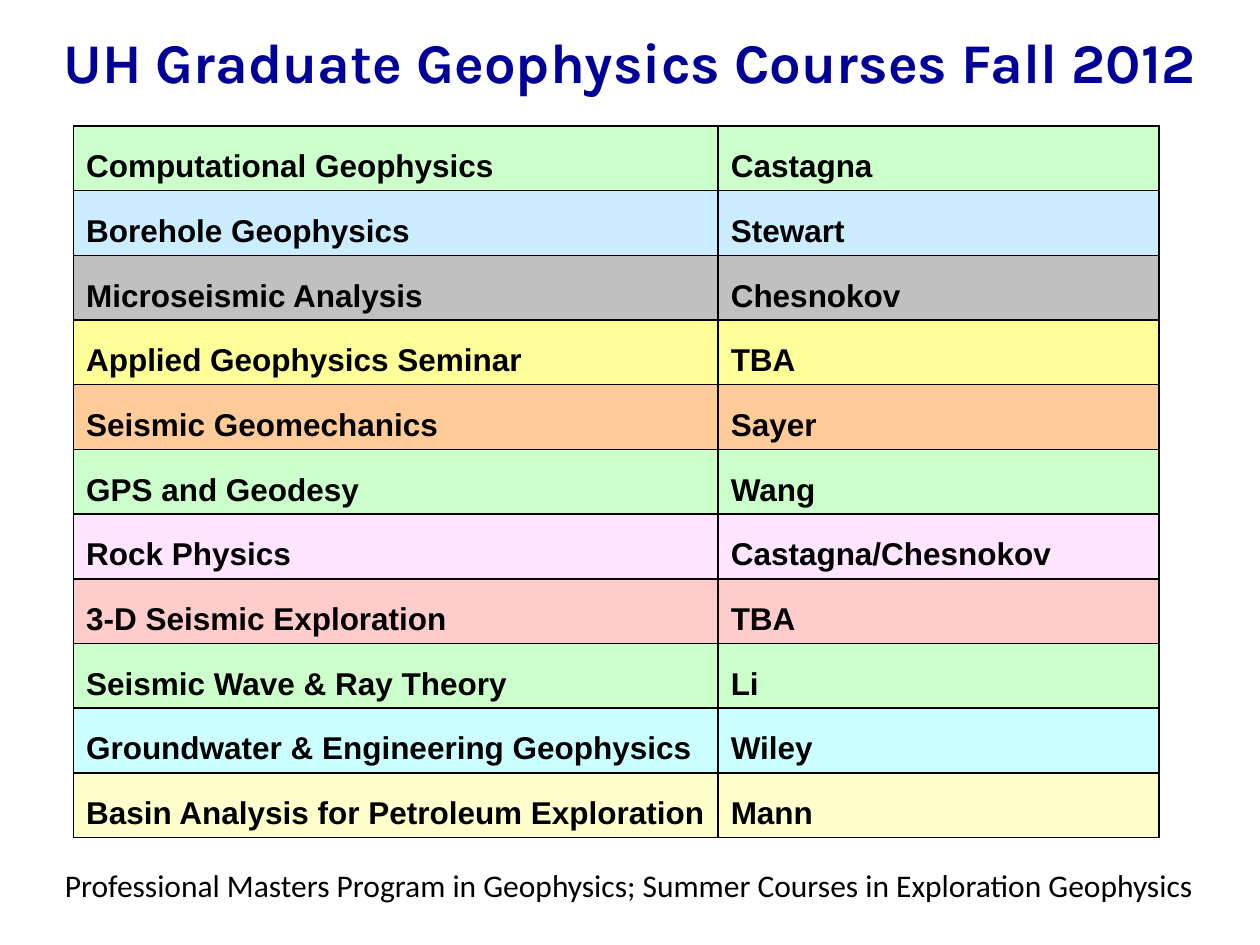
from dataclasses import dataclass

from lxml.etree import SubElement
from pptx import Presentation
from pptx.dml.color import RGBColor as Color
from pptx.enum.text import MSO_ANCHOR as Anchor, MSO_AUTO_SIZE as AutoSize, PP_ALIGN as Align
from pptx.oxml.ns import qn
from pptx.util import Pt

TITLE = "UH Graduate Geophysics Courses Fall 2012"
FOOTER = "Professional Masters Program in Geophysics; Summer Courses in Exploration Geophysics"

# course, instructor, row colour
COURSES = [
    ("Computational Geophysics", "Castagna", "green"),
    ("Borehole Geophysics", "Stewart", "blue"),
    ("Microseismic Analysis", "Chesnokov", "gray"),
    ("Applied Geophysics Seminar", "TBA", "yellow"),
    ("Seismic Geomechanics", "Sayer", "orange"),
    ("GPS and Geodesy", "Wang", "green"),
    ("Rock Physics", "Castagna/Chesnokov", "pink"),
    ("3-D Seismic Exploration", "TBA", "rose"),
    ("Seismic Wave & Ray Theory", "Li", "green"),
    ("Groundwater & Engineering Geophysics", "Wiley", "cyan"),
    ("Basin Analysis for Petroleum Exploration", "Mann", "cream"),
]

ROW_COLORS = {
    "green": "CCFFCC", "blue": "CCECFF", "gray": "C0C0C0",
    "yellow": "FFFF99", "orange": "FFCC99", "pink": "FFE5FF",
    "rose": "FFCCCC", "cyan": "CCFFFF", "cream": "FFFFCC",
}


@dataclass(frozen=True)
class TextStyle:
    font: str
    size: int
    color: str
    bold: bool = False


@dataclass(frozen=True)
class Theme:
    title = TextStyle("Karla", 32, "000099", True)
    cell = TextStyle("Arial", 18, "000000", True)
    footer = TextStyle("Calibri", 18, "000000")
    border = "000000"
    border_width = 1


THEME = Theme()
SLIDE_SIZE = (720, 540)
TITLE_BOX = (0, 12, 720, 45.5)
FOOTER_BOX = (30, 491.5, 666, 29)
TABLE_LEFT, TABLE_TOP, TABLE_HEIGHT = 42, 72, 406.8
COLUMN_WIDTHS = (368.4, 251.8)


def write(frame, text, style, align=Align.LEFT):
    para = frame.paragraphs[0]
    para.alignment = align
    span = para.add_run()
    span.text = text
    span.font.name = style.font
    span.font.size = Pt(style.size)
    span.font.bold = style.bold
    span.font.color.rgb = Color.from_string(style.color)


def add_text(page, bounds, text, style, align=Align.LEFT, wrap=True):
    frame = page.shapes.add_textbox(*map(Pt, bounds)).text_frame
    frame.word_wrap = wrap
    frame.auto_size = AutoSize.SHAPE_TO_FIT_TEXT
    write(frame, text, style, align)


def add_borders(cell):
    """Line all four sides; the lines must come before the cell's fill in the XML."""
    properties = cell._tc.get_or_add_tcPr()
    for side in ("lnL", "lnR", "lnT", "lnB"):
        line = SubElement(properties, qn(f"a:{side}"), w=str(Pt(THEME.border_width)))
        fill = SubElement(line, qn("a:solidFill"))
        SubElement(fill, qn("a:srgbClr"), val=THEME.border)


def add_courses(page):
    bounds = (TABLE_LEFT, TABLE_TOP, sum(COLUMN_WIDTHS), TABLE_HEIGHT)
    table = page.shapes.add_table(
        len(COURSES), len(COLUMN_WIDTHS), *map(Pt, bounds)).table
    table.first_row = table.horz_banding = False
    for column, width in zip(table.columns, COLUMN_WIDTHS):
        column.width = Pt(width)
    for row, (course, instructor, color) in zip(table.rows, COURSES):
        row.height = Pt(TABLE_HEIGHT / len(COURSES))
        for cell, text in zip(row.cells, (course, instructor)):
            add_borders(cell)
            cell.fill.solid()
            cell.fill.fore_color.rgb = Color.from_string(ROW_COLORS[color])
            cell.vertical_anchor = Anchor.BOTTOM
            write(cell.text_frame, text, THEME.cell)


def main():
    deck = Presentation()
    deck.slide_width, deck.slide_height = map(Pt, SLIDE_SIZE)
    page = deck.slides.add_slide(deck.slide_layouts[6])
    add_text(page, TITLE_BOX, TITLE, THEME.title, Align.CENTER)
    add_courses(page)
    add_text(page, FOOTER_BOX, FOOTER, THEME.footer, wrap=False)
    deck.save("out.pptx")


if __name__ == "__main__":
    main()
